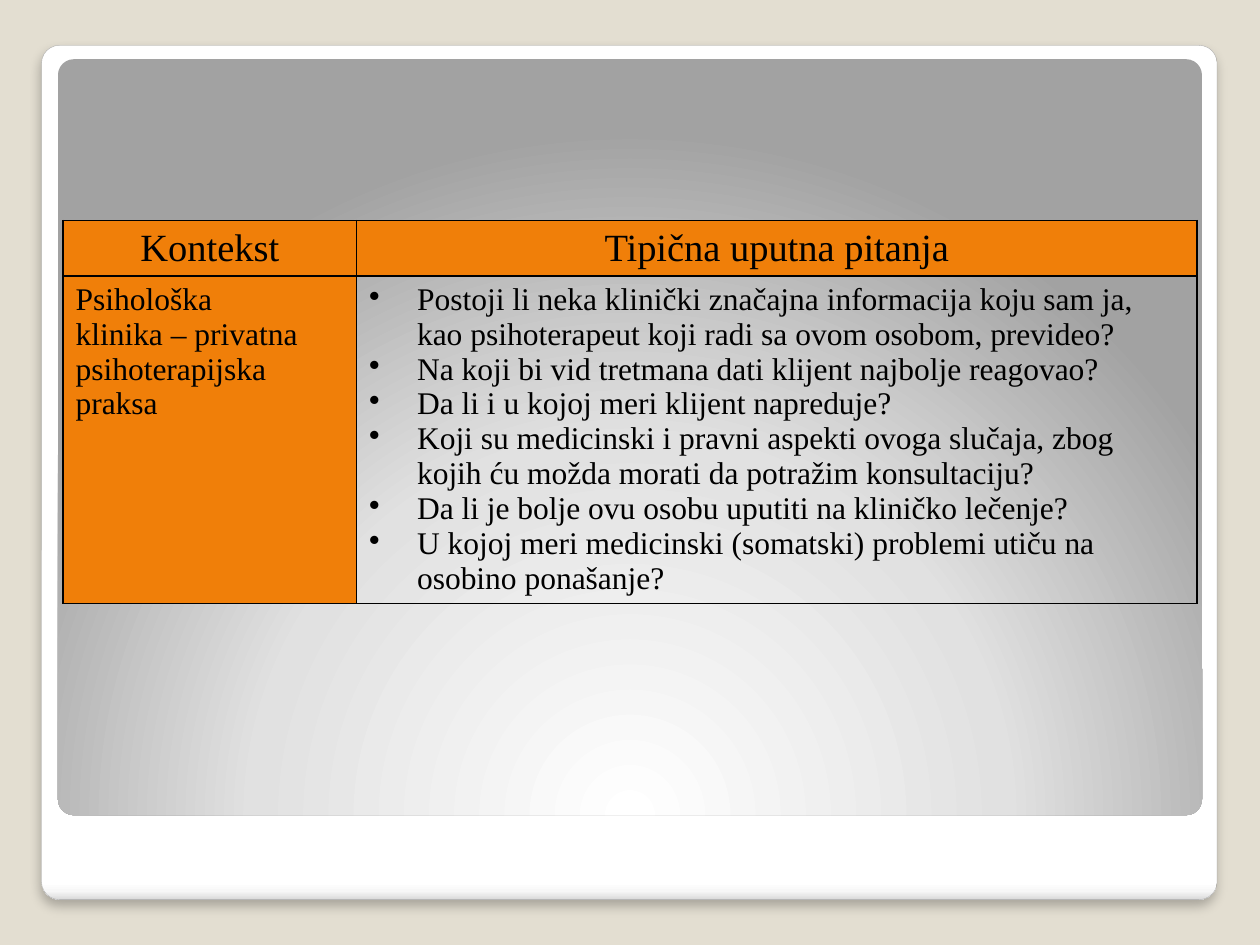
"""Build a slide with a framed table of typical referral questions."""
from dataclasses import dataclass

from lxml import etree
from pptx import Presentation
from pptx.dml.color import RGBColor
from pptx.enum.shapes import MSO_SHAPE
from pptx.enum.text import PP_ALIGN
from pptx.oxml import parse_xml
from pptx.oxml.ns import nsdecls, qn
from pptx.util import Inches, Pt

ROUNDED = MSO_SHAPE.ROUNDED_RECTANGLE
CENTER = PP_ALIGN.CENTER
LEFT = PP_ALIGN.LEFT


@dataclass(frozen=True)
class Theme:
    """Colours, font and type sizes."""
    background: str = "E3DED1"
    accent: str = "F07F09"
    ink: str = "000000"
    outline: str = "A4A4A4"
    font: str = "Times New Roman"
    header_size: int = 22
    body_size: int = 18
    border_width: float = 1


@dataclass(frozen=True)
class Panel:
    """A rounded panel with a gradient."""
    left: float
    top: float
    width: float
    height: float
    stops: tuple[tuple[int, str], ...]
    direction: str
    raised: bool = False


@dataclass(frozen=True)
class CellContent:
    """The paragraphs and look of one table cell."""
    lines: tuple[str, ...]
    size: int
    align: PP_ALIGN = LEFT
    filled: bool = True
    bulleted: bool = False


THEME = Theme()
PANELS = (
    Panel(0.33, 0.36, 9.33, 6.78,
          ((0, "FFFFFF"), (98, "FFFFFF"), (99, "F7F7F7"), (100, "DADADA")),
          '<a:lin ang="5400000" scaled="0"/>', raised=True),
    Panel(0.46, 0.47, 9.08, 6,
          ((0, "FFFFFF"), (55, "E1E1E1"), (100, "A2A2A2")),
          '<a:path path="circle">'
          '<a:fillToRect l="50000" t="175000" r="50000" b="-75000"/></a:path>'),
)
COLUMN_WIDTHS = (2.33, 6.67)
ROW_HEIGHTS = (0.44, 2.6)
QUESTIONS = (
    "Postoji li neka klinički značajna informacija koju sam ja, "
    "kao psihoterapeut koji radi sa ovom osobom, prevideo?",
    "Na koji bi vid tretmana dati klijent najbolje reagovao?",
    "Da li i u kojoj meri klijent napreduje?",
    "Koji su medicinski i pravni aspekti ovoga slučaja, "
    "zbog kojih ću možda morati da potražim konsultaciju?",
    "Da li je bolje ovu osobu uputiti na kliničko lečenje?",
    "U kojoj meri medicinski (somatski) problemi utiču na osobino ponašanje?",
)
ROWS = (
    (CellContent(("Kontekst",), THEME.header_size, CENTER),
     CellContent(("Tipična uputna pitanja",), THEME.header_size, CENTER)),
    (CellContent(("Psihološka", "klinika – privatna", "psihoterapijska", "praksa"),
                 THEME.body_size),
     CellContent(QUESTIONS, THEME.body_size, filled=False, bulleted=True)),
)


def color(value: str) -> RGBColor:
    """Return a colour from its hexadecimal value."""
    return RGBColor.from_string(value)


def draw_panel(slide, panel: Panel) -> None:
    """Draw a gradient panel, with an outline and shadow if raised."""
    box = slide.shapes.add_shape(ROUNDED, *map(
        Inches, (panel.left, panel.top, panel.width, panel.height)))
    box.adjustments[0] = 0.021
    box.shadow.inherit = False
    stops = "".join(
        f'<a:gs pos="{position * 1000}"><a:srgbClr val="{value}"/></a:gs>'
        for position, value in panel.stops)
    properties = box._element.spPr
    properties.insert(2, parse_xml(
        f'<a:gradFill {nsdecls("a")} rotWithShape="1"><a:gsLst>{stops}</a:gsLst>'
        f'{panel.direction}</a:gradFill>'))
    if not panel.raised:
        box.line.fill.background()
        return
    box.line.color.rgb = color(THEME.outline)
    box.line.width = Pt(0.16)
    properties.find(qn("a:effectLst")).append(parse_xml(
        f'<a:outerShdw {nsdecls("a")} blurRad="{Pt(6)}" dist="{Pt(4)}" '
        f'dir="5400000" algn="t" rotWithShape="0"><a:srgbClr val="{THEME.ink}">'
        '<a:alpha val="25000"/></a:srgbClr></a:outerShdw>'))


def add_bullet(para) -> None:
    """Give a paragraph a hanging bullet."""
    properties = para._p.get_or_add_pPr()
    indent = Inches(0.38)
    properties.set("marL", str(indent))
    properties.set("indent", str(-indent))
    etree.SubElement(properties, qn("a:buChar")).set("char", "•")


def draw_borders(cell) -> None:
    """Draw a solid line on each side of a cell."""
    properties = cell._tc.get_or_add_tcPr()
    for side in ("lnL", "lnR", "lnT", "lnB"):
        properties.append(parse_xml(
            f'<a:{side} {nsdecls("a")} w="{Pt(THEME.border_width)}"><a:solidFill>'
            f'<a:srgbClr val="{THEME.ink}"/></a:solidFill></a:{side}>'))


def fill_cell(cell, content: CellContent) -> None:
    """Write and format one table cell."""
    draw_borders(cell)
    if content.filled:
        cell.fill.solid()
        cell.fill.fore_color.rgb = color(THEME.accent)
    else:
        cell.fill.background()
    cell.text = "\n".join(content.lines)
    formats = {"name": THEME.font, "size": Pt(content.size), "bold": False}
    for para in cell.text_frame.paragraphs:
        para.alignment = content.align
        if content.bulleted:
            add_bullet(para)
        for span in para.runs:
            for attribute, value in formats.items():
                setattr(span.font, attribute, value)
            span.font.color.rgb = color(THEME.ink)


def draw_table(slide) -> None:
    """Draw the table of contexts and questions."""
    table = slide.shapes.add_table(
        len(ROWS), len(COLUMN_WIDTHS), Inches(0.5), Inches(1.75),
        Inches(sum(COLUMN_WIDTHS)), Inches(sum(ROW_HEIGHTS))).table
    table.first_row = table.horz_banding = False
    for column, width in zip(table.columns, COLUMN_WIDTHS):
        column.width = Inches(width)
    for row, height, contents in zip(table.rows, ROW_HEIGHTS, ROWS):
        row.height = Inches(height)
        for cell, content in zip(row.cells, contents):
            fill_cell(cell, content)


def main() -> None:
    """Build and save the deck."""
    deck = Presentation()
    deck.slide_width, deck.slide_height = Inches(10), Inches(7.5)
    page = deck.slides.add_slide(deck.slide_layouts[6])
    page.background.fill.solid()
    page.background.fill.fore_color.rgb = color(THEME.background)
    for panel in PANELS:
        draw_panel(page, panel)
    draw_table(page)
    deck.save("out.pptx")


if __name__ == "__main__":
    main()
